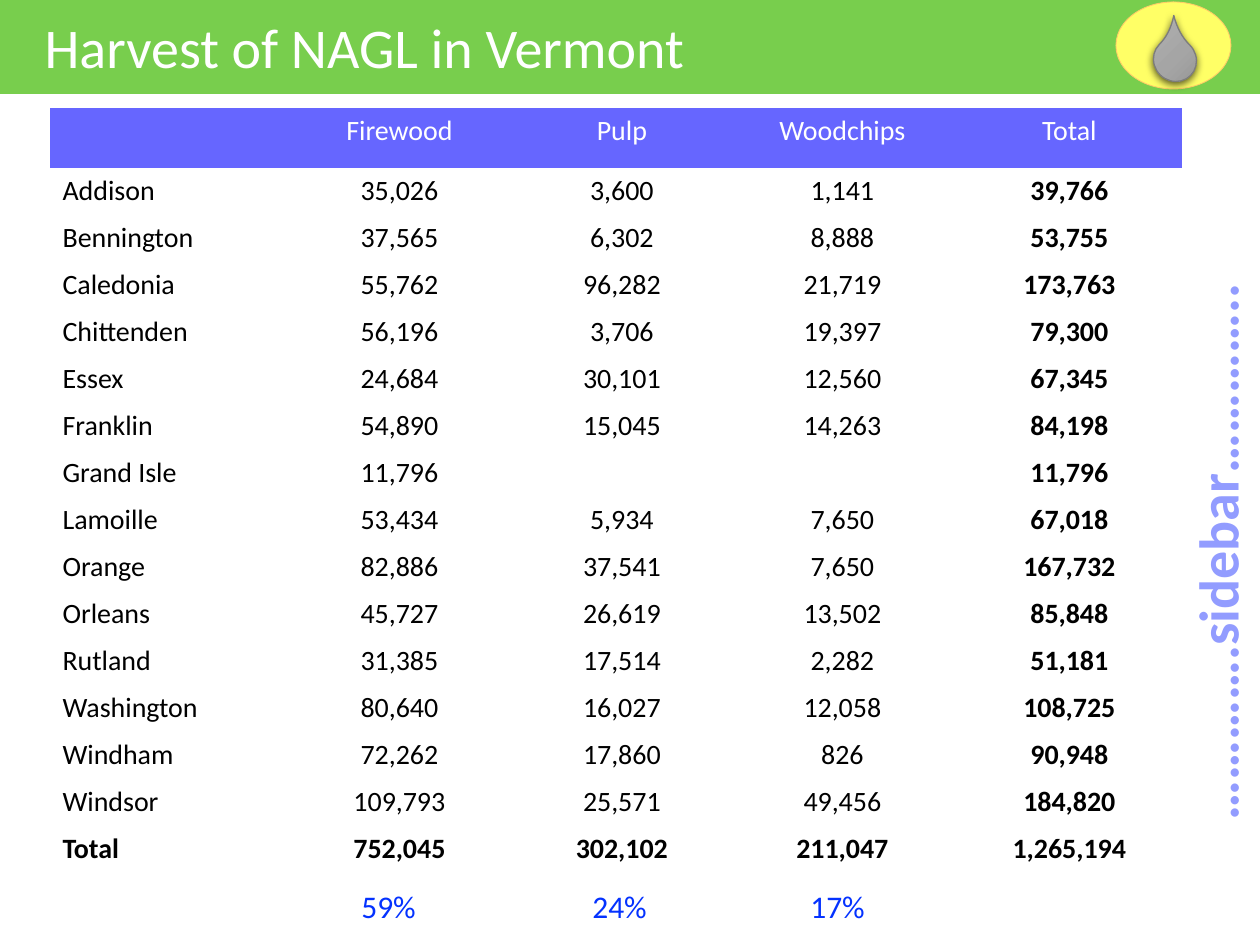
from lxml.etree import SubElement
from pptx import Presentation
from pptx.dml.color import RGBColor
from pptx.enum.shapes import MSO_SHAPE as Shape
from pptx.enum.text import MSO_ANCHOR as Anchor, PP_ALIGN as Align
from pptx.oxml import parse_xml
from pptx.oxml.ns import nsdecls, qn
from pptx.util import Pt

PX = 914400 // 126
COLORS = {
    "band": "78CE4D", "white": "FFFFFF", "black": "000000", "header": "6666FF",
    "share": "0432FF", "sidebar": "929CFF", "badge": "FFFF66",
    "badge_line": "FFCC66", "drop_line": "7C7C7C",
}
DROP_STOPS = {0: "AFAFAF", 50: "A5A5A5", 100: "939393"}
NO_GRID_STYLE = "{2D5ABB26-0587-4C30-8999-92F81FD0307C}"
COLUMN_WIDTHS = [233, 233, 212, 229, 225]
HEADER_HEIGHT, ROW_HEIGHT = 60, 47
HARVEST = [
    ["", "Firewood", "Pulp", "Woodchips", "Total"],
    ["Addison", "35,026", "3,600", "1,141", "39,766"],
    ["Bennington", "37,565", "6,302", "8,888", "53,755"],
    ["Caledonia", "55,762", "96,282", "21,719", "173,763"],
    ["Chittenden", "56,196", "3,706", "19,397", "79,300"],
    ["Essex", "24,684", "30,101", "12,560", "67,345"],
    ["Franklin", "54,890", "15,045", "14,263", "84,198"],
    ["Grand Isle", "11,796", "", "", "11,796"],
    ["Lamoille", "53,434", "5,934", "7,650", "67,018"],
    ["Orange", "82,886", "37,541", "7,650", "167,732"],
    ["Orleans", "45,727", "26,619", "13,502", "85,848"],
    ["Rutland", "31,385", "17,514", "2,282", "51,181"],
    ["Washington", "80,640", "16,027", "12,058", "108,725"],
    ["Windham", "72,262", "17,860", "826", "90,948"],
    ["Windsor", "109,793", "25,571", "49,456", "184,820"],
    ["Total", "752,045", "302,102", "211,047", "1,265,194"],
]


def rgb(name):
    """Look up a palette colour."""
    return RGBColor.from_string(COLORS[name])


def scale(*lengths):
    """Turn pixel lengths into EMU."""
    return [length * PX for length in lengths]


def set_attributes(target, values):
    """Set each named attribute on the target."""
    for name, value in values.items():
        setattr(target, name, value)


def write(frame, text, size, color, bold=False, align=Align.LEFT):
    """Write one formatted paragraph into a text frame."""
    para = frame.paragraphs[0]
    para.alignment = align
    if not text:
        SubElement(para._p, qn("a:endParaRPr"), sz=str(size * 100))
        return para
    span = para.add_run()
    span.text = text
    set_attributes(span.font, {"name": "Calibri", "size": Pt(size), "bold": bold})
    span.font.color.rgb = rgb(color)
    return para


def add_title(page, text, area):
    """Place the slide title."""
    box = page.shapes.title
    set_attributes(box, dict(zip(("left", "top", "width", "height"), scale(*area))))
    set_attributes(box.text_frame, {"word_wrap": False, "vertical_anchor": Anchor.MIDDLE})
    write(box.text_frame, text, 32, "white")


def add_text(page, text, area, size, color, bold=False, wrap=True, rotation=0):
    """Add a text box and return its paragraph."""
    box = page.shapes.add_textbox(*scale(*area))
    box.rotation = rotation
    box.text_frame.word_wrap = wrap
    return write(box.text_frame, text, size, color, bold)


def add_tab_stops(para, positions):
    """Give a paragraph left tab stops."""
    tabs = SubElement(para._p.get_or_add_pPr(), qn("a:tabLst"))
    for position in scale(*positions):
        SubElement(tabs, qn("a:tab"), pos=str(position), algn="l")


def add_shape(parent, kind, area, fill=None, line=None, weight=0):
    """Add a preset shape without a shadow."""
    shape = parent.shapes.add_shape(kind, *scale(*area))
    if fill:
        shape.shadow.inherit = False
        shape.fill.solid()
        shape.fill.fore_color.rgb = rgb(fill)
    if line:
        shape.line.color.rgb = rgb(line)
        shape.line.width = Pt(weight)
    else:
        shape.line.fill.background()
    return shape


def shade_drop(drop):
    """Give the drop its grey gradient and soft shadow."""
    stops = "".join(
        f'<a:gs pos="{place * 1000}"><a:srgbClr val="{color}"/></a:gs>'
        for place, color in DROP_STOPS.items()
    )
    properties = drop._element.spPr
    properties.insert(2, parse_xml(
        f'<a:gradFill {nsdecls("a")} rotWithShape="1"><a:gsLst>{stops}</a:gsLst>'
        '<a:lin ang="5400000" scaled="0"/></a:gradFill>'))
    properties.append(parse_xml(
        f'<a:effectLst {nsdecls("a")}><a:outerShdw blurRad="{Pt(4.5)}" dist="{Pt(1.5)}" '
        f'dir="5400000" algn="ctr" rotWithShape="0"><a:srgbClr val="{COLORS["black"]}">'
        '<a:alpha val="63000"/></a:srgbClr></a:outerShdw></a:effectLst>'))


def add_badge(page):
    """Add the yellow badge with its drop."""
    badge = page.shapes.add_group_shape()
    add_shape(badge, Shape.OVAL, (1116, 2, 115, 87), "badge", "badge_line", 0.5)
    drop = add_shape(badge, Shape.TEAR, (1154, 38, 42, 44), line="drop_line", weight=0.75)
    drop.rotation = 314.8
    drop.adjustments[0] = 1.465
    shade_drop(drop)


def add_harvest_table(page, left, top):
    """Add the table of harvest by county."""
    heights = [HEADER_HEIGHT] + [ROW_HEIGHT] * (len(HARVEST) - 1)
    area = scale(left, top, sum(COLUMN_WIDTHS), sum(heights))
    table = page.shapes.add_table(len(HARVEST), len(COLUMN_WIDTHS), *area).table
    table._tbl.tblPr.find(qn("a:tableStyleId")).text = NO_GRID_STYLE
    set_attributes(table, {"first_row": False, "horz_banding": False})
    for column, width in zip(table.columns, scale(*COLUMN_WIDTHS)):
        column.width = width
    for row, height in zip(table.rows, scale(*heights)):
        row.height = height
    last_row, last_column = len(HARVEST) - 1, len(COLUMN_WIDTHS) - 1
    for r, record in enumerate(HARVEST):
        for c, text in enumerate(record):
            cell = table.cell(r, c)
            if r == 0:
                cell.fill.solid()
                cell.fill.fore_color.rgb = rgb("header")
            else:
                cell.fill.background()
            bold = r == last_row or (r > 0 and c == last_column)
            write(cell.text_frame, text, 16, "black" if r else "white", bold,
                  Align.CENTER if c else Align.LEFT)


def main():
    """Build the harvest slide."""
    deck = Presentation()
    set_attributes(deck, {"slide_width": 1260 * PX, "slide_height": 945 * PX})
    page = deck.slides.add_slide(deck.slide_layouts[5])
    band = add_shape(page, Shape.RECTANGLE, (0, 0, 1261, 94), "band")
    page.shapes.title._element.addprevious(band._element)
    add_title(page, "Harvest of NAGL in Vermont", (32, 6, 785, 81))
    add_badge(page)
    add_harvest_table(page, 50, 108)
    shares = add_text(page, "59%\t24%\t17%", (349, 881, 786, 50), 18, "share")
    add_tab_stops(shares, (231, 449))
    add_text(page, "………….sidebar…………..", (934, 509, 566, 81), 32, "sidebar",
             bold=True, wrap=False, rotation=270)
    deck.save("out.pptx")


if __name__ == "__main__":
    main()
